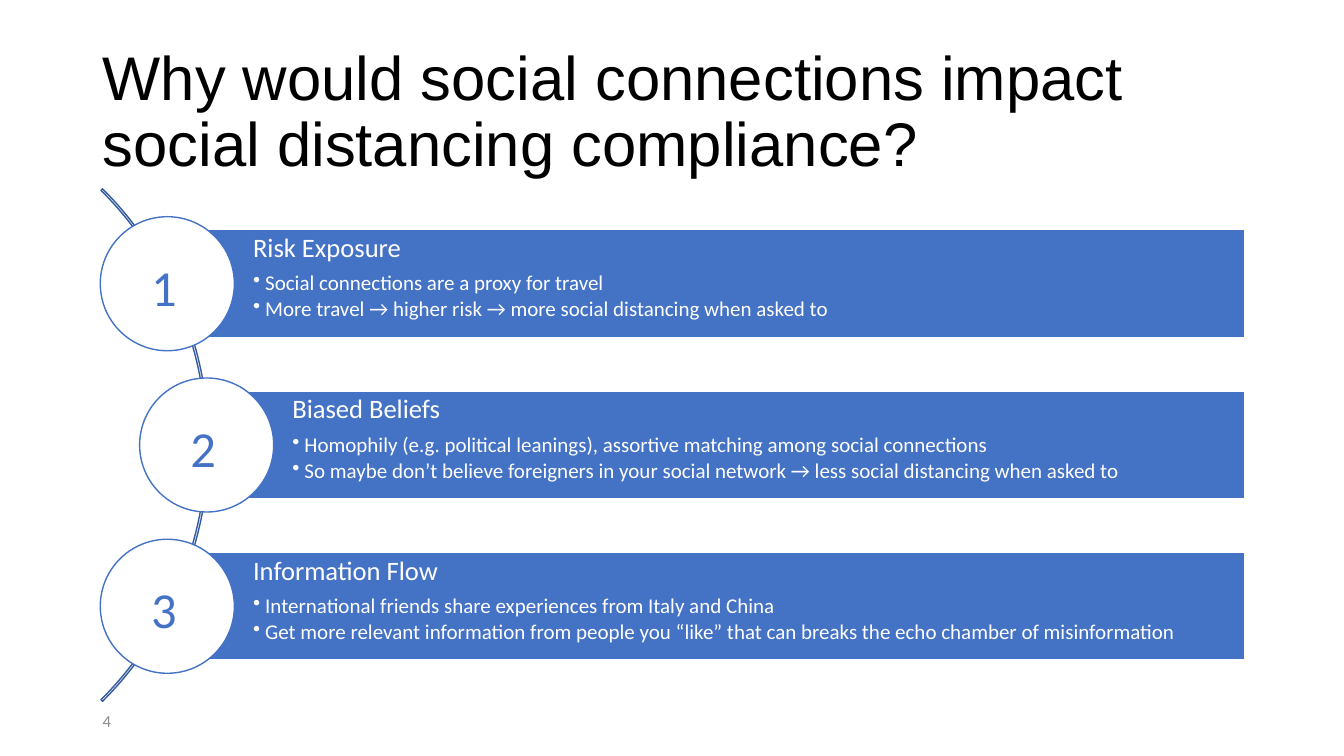
import pptx
import pptx.util
import pptx.dml.color
import pptx.enum.shapes
import pptx.enum.text
import pptx.oxml.ns
from lxml import etree

Inches = pptx.util.Inches
Pt = pptx.util.Pt
SHAPE = pptx.enum.shapes.MSO_SHAPE
ALIGN = pptx.enum.text.PP_ALIGN
ANCHOR = pptx.enum.text.MSO_ANCHOR

TITLE = "Why would social connections impact social distancing compliance?"
PAGE_NUMBER = "4"
REASONS = [
    ("Risk Exposure", [
        "Social connections are a proxy for travel",
        "More travel → higher risk → more social distancing when asked to",
    ]),
    ("Biased Beliefs", [
        "Homophily (e.g. political leanings), assortive matching among social connections",
        "So maybe don’t believe foreigners in your social network → less social distancing when asked to",
    ]),
    ("Information Flow", [
        "International friends share experiences from Italy and China",
        "Get more relevant information from people you “like” that can breaks the echo chamber of misinformation",
    ]),
]
COLORS = {
    "black": "000000",
    "white": "FFFFFF",
    "blue": "4472C4",
    "arc": "365B9D",
    "gray": "8C8C8C",
}

BAR_LEFTS = [1.66, 2.05, 1.66]
BAR_RIGHT = 12.35
BAR_TOP = 2.28
BAR_HEIGHT = 1.07
BAR_STEP = 1.6
CIRCLE = 1.33
ARC = (-5.12, 0.82, 7.19, 7.19)
ARC_ADJUSTMENTS = [189, 27, 0.003]
BULLET_INDENT = 0.12


def color(name):
    return pptx.dml.color.RGBColor.from_string(COLORS[name])


def add_shape(page, kind, place, fill=None, line="white"):
    shape = page.shapes.add_shape(kind, *map(Inches, place))
    shape.shadow.inherit = False
    if fill:
        shape.fill.solid()
        shape.fill.fore_color.rgb = color(fill)
    else:
        shape.fill.background()
    shape.line.color.rgb = color(line)
    shape.line.width = Pt(1)
    return shape


def add_box(page, place, anchor=ANCHOR.TOP):
    box = page.shapes.add_textbox(*map(Inches, place))
    box.text_frame.word_wrap = True
    box.text_frame.vertical_anchor = anchor
    return box


def write(box, text, size, tint, font="Calibri", spacing=None, after=0, bullet=False):
    frame = box.text_frame
    para = frame.paragraphs[0] if not frame.text else frame.add_paragraph()
    para.alignment = ALIGN.LEFT
    if spacing:
        para.line_spacing = spacing
    para.space_after = Pt(size * after)
    if bullet:
        para.level = 1
        properties = para._p.get_or_add_pPr()
        properties.set("marL", str(Inches(BULLET_INDENT)))
        properties.set("indent", str(-Inches(BULLET_INDENT)))
        mark = etree.SubElement(properties, pptx.oxml.ns.qn("a:buChar"))
        mark.set("char", "•")
    span = para.add_run()
    span.text = text
    span.font.name = font
    span.font.size = Pt(size)
    span.font.color.rgb = color(tint)


def add_reason(page, index, heading, points):
    left = BAR_LEFTS[index]
    top = BAR_TOP + index * BAR_STEP
    bar = add_shape(page, SHAPE.RECTANGLE, (left, top, BAR_RIGHT - left, BAR_HEIGHT), "blue")
    frame = bar.text_frame
    frame.word_wrap = True
    frame.vertical_anchor = ANCHOR.TOP
    frame.margin_left = Inches(0.85)
    frame.margin_top = frame.margin_right = frame.margin_bottom = Inches(0.05)
    write(bar, heading, 19, "white", spacing=0.9, after=0.35)
    for point in points:
        write(bar, point, 15, "white", spacing=0.9, after=0.15, bullet=True)
    circle_top = top + (BAR_HEIGHT - CIRCLE) / 2
    add_shape(page, SHAPE.OVAL, (left - CIRCLE / 2, circle_top, CIRCLE, CIRCLE), "white", "blue")
    number = add_box(page, (left - 0.26, top + 0.21, 1.29, 0.71))
    number.text_frame.auto_size = pptx.enum.text.MSO_AUTO_SIZE.SHAPE_TO_FIT_TEXT
    write(number, str(index + 1), 36, "blue")


def main():
    deck = pptx.Presentation()
    deck.slide_width = Inches(13.33)
    deck.slide_height = Inches(7.5)
    page = deck.slides.add_slide(deck.slide_layouts[6])
    title = add_box(page, (0.92, 0.4, 11.5, 1.45), ANCHOR.MIDDLE)
    write(title, TITLE, 44, "black", font="Arial", spacing=0.9)
    arc = add_shape(page, SHAPE.BLOCK_ARC, ARC, line="arc")
    for position, value in enumerate(ARC_ADJUSTMENTS):
        arc.adjustments[position] = value
    for index, (heading, points) in enumerate(REASONS):
        add_reason(page, index, heading, points)
    footer = add_box(page, (0.92, 6.95, 3, 0.4), ANCHOR.MIDDLE)
    write(footer, PAGE_NUMBER, 12, "gray")
    deck.save("out.pptx")


if __name__ == "__main__":
    main()
